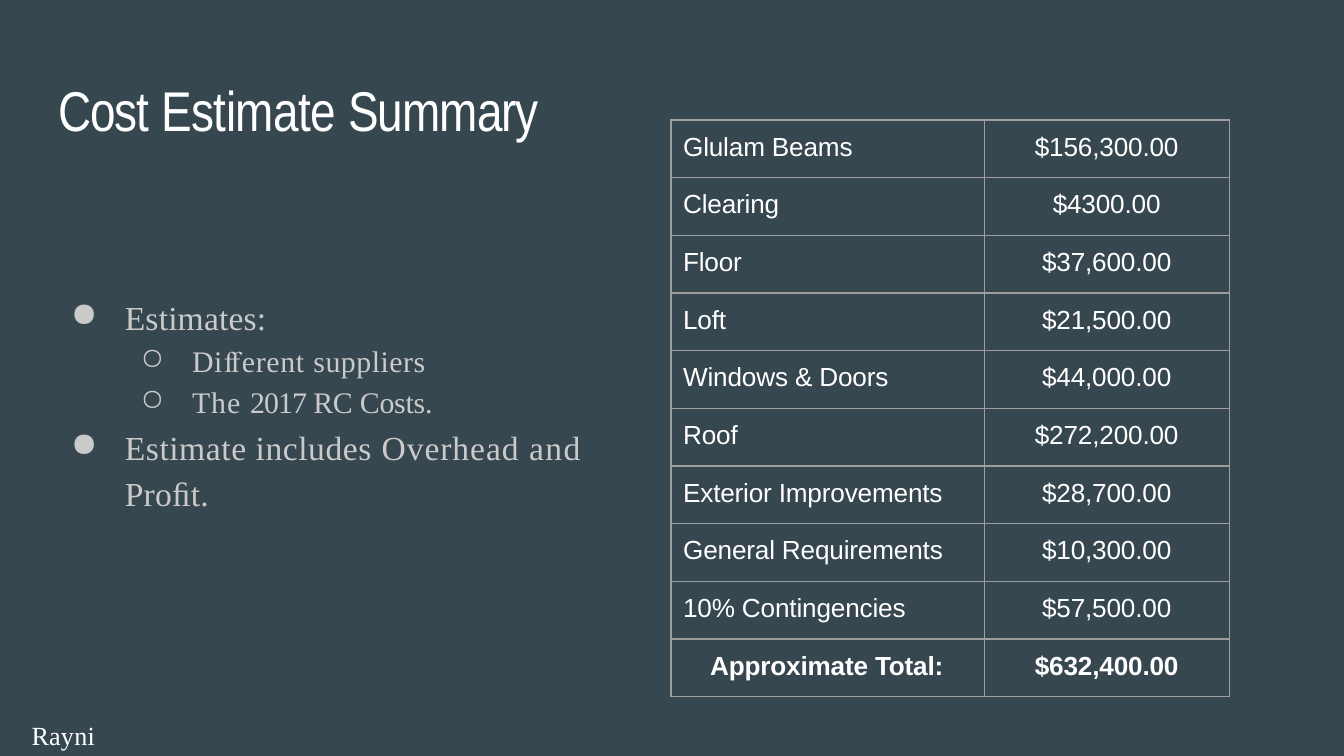
from lxml import etree
from pptx import Presentation
from pptx import util as u
from pptx.dml import color
from pptx.enum import text
from pptx.oxml import ns

COLOURS = {"slate": "37474F", "white": "FFFFFF", "silver": "CACACA", "rule": "9E9E9E"}

COSTS = [
    ("Glulam Beams", "$156,300.00"),
    ("Clearing", "$4300.00"),
    ("Floor", "$37,600.00"),
    ("Loft", "$21,500.00"),
    ("Windows & Doors", "$44,000.00"),
    ("Roof", "$272,200.00"),
    ("Exterior Improvements", "$28,700.00"),
    ("General Requirements", "$10,300.00"),
    ("10% Contingencies", "$57,500.00"),
    ("Approximate Total:", "$632,400.00"),
]

NOTES = [
    (0, {}, [("Estimates:", 0.1)]),
    (1, {"space_before": u.Pt(3.2)}, [("Diﬀerent ", 0.4), ("suppliers", 0.3)]),
    (1, {"space_before": u.Pt(2.5)},
     [("The ", 0.6), ("2017 ", -0.5), ("RC ", -0.2), ("Costs.", -0.1)]),
    (0, {"space_before": u.Pt(0.7), "line_spacing": u.Pt(24.8)},
     [("Estimate includes ", 0.3), ("Overhead ", 0.5), ("and ", 0.7), ("Proﬁt.", 0.1)]),
]


def apply(target, values):
    for name, value in values.items():
        setattr(target, name, value)


def add_node(parent, tag, **attributes):
    return etree.SubElement(parent, ns.qn(tag), attributes)


class Deck:
    frame_format = {"margin_left": 0, "margin_right": 0, "margin_bottom": 0,
                    "word_wrap": True, "auto_size": text.MSO_AUTO_SIZE.NONE,
                    "vertical_anchor": text.MSO_ANCHOR.TOP}
    title_font = {"name": "Arial Narrow", "size": u.Pt(30)}
    table_font = {"name": "Arial", "size": u.Pt(14)}
    label_font = {"name": "Times New Roman", "size": u.Pt(14)}
    levels = [
        {"bullet": "●", "left": 1.04, "hang": 1.02, "size": 18},
        {"bullet": "○", "left": 2.31, "hang": 0.97, "size": 16},
    ]

    def __init__(self):
        self.presentation = Presentation()
        apply(self.presentation, {"slide_width": u.Cm(25.4), "slide_height": u.Cm(14.29)})
        self.slide = self.presentation.slides.add_slide(self.presentation.slide_layouts[5])
        background = self.slide.background.fill
        background.solid()
        background.fore_color.rgb = self.colour("slate")

    def colour(self, name):
        return color.RGBColor.from_string(COLOURS[name])

    def add_runs(self, paragraph, pieces, font, tint="white"):
        for words, spacing in pieces:
            run = paragraph.add_run()
            run.text = words
            apply(run.font, font)
            run.font.color.rgb = self.colour(tint)
            run._r.get_or_add_rPr().set("spc", str(round(spacing * 100)))

    def frame(self, holder, margin_top=0):
        apply(holder.text_frame, {**self.frame_format, "margin_top": u.Cm(margin_top)})
        return holder.text_frame

    def title(self, pieces, left, top, width, height):
        heading = self.slide.shapes.title
        apply(heading, {"left": u.Cm(left), "top": u.Cm(top),
                        "width": u.Cm(width), "height": u.Cm(height)})
        paragraph = self.frame(heading, 0.03).paragraphs[0]
        paragraph.alignment = text.PP_ALIGN.LEFT
        self.add_runs(paragraph, pieces, self.title_font)

    def label(self, pieces, left, top, width, height):
        box = self.slide.shapes.add_textbox(*map(u.Cm, (left, top, width, height)))
        self.add_runs(self.frame(box).paragraphs[0], pieces, self.label_font)

    def bullets(self, notes, left, top, width, height):
        box = self.slide.shapes.add_textbox(*map(u.Cm, (left, top, width, height)))
        frame = self.frame(box, 0.15)
        for index, (level, spacing, pieces) in enumerate(notes):
            paragraph = frame.add_paragraph() if index else frame.paragraphs[0]
            style = self.levels[level]
            properties = paragraph._p.get_or_add_pPr()
            properties.set("marL", str(u.Cm(style["left"])))
            properties.set("indent", str(-u.Cm(style["hang"])))
            add_node(properties, "a:buChar", char=style["bullet"])
            apply(paragraph, {"level": level, **spacing})
            font = {"name": "Times New Roman", "size": u.Pt(style["size"])}
            self.add_runs(paragraph, pieces, font, "silver")

    def borders(self, cell):
        properties = cell._tc.get_or_add_tcPr()
        for side in ("a:lnL", "a:lnR", "a:lnT", "a:lnB"):
            line = add_node(properties, side, w=str(u.Pt(0.75)))
            add_node(add_node(line, "a:solidFill"), "a:srgbClr", val=COLOURS["rule"])

    def table(self, rows, left, top, widths, row_height):
        costs = self.slide.shapes.add_table(
            len(rows), len(widths), u.Cm(left), u.Cm(top),
            u.Cm(sum(widths)), u.Cm(row_height * len(rows))).table
        apply(costs, {"first_row": False, "horz_banding": False})
        for column, width in zip(costs.columns, widths):
            column.width = u.Cm(width)
        for row_index, entries in enumerate(rows):
            costs.rows[row_index].height = u.Cm(row_height)
            total = row_index == len(rows) - 1
            for column_index, words in enumerate(entries):
                cell = costs.cell(row_index, column_index)
                indent = 0 if column_index else 0.74 if total else 0.23
                apply(cell, {"margin_left": u.Cm(indent), "margin_right": 0,
                             "margin_top": u.Cm(0.23), "margin_bottom": 0})
                self.borders(cell)
                cell.fill.solid()
                cell.fill.fore_color.rgb = self.colour("slate")
                paragraph = cell.text_frame.paragraphs[0]
                paragraph.alignment = (text.PP_ALIGN.CENTER if column_index
                                       else text.PP_ALIGN.LEFT)
                self.add_runs(paragraph, [(words, -0.1)], {**self.table_font, "bold": total})


def main():
    deck = Deck()
    deck.title([("Cost ", -0.5), ("Estimate ", -0.3), ("Summary", -0.5)],
               1.1, 1.4, 9.2, 1.35)
    deck.label([("R", -0.5), ("ayni", 0.1)], 0.6, 13.59, 1.3, 0.66)
    deck.table(COSTS, 12.68, 2.27, (5.92, 4.63), 1.09)
    deck.bullets(NOTES, 1.32, 5.46, 9.7, 4.24)
    deck.presentation.save("out.pptx")


if __name__ == "__main__":
    main()
